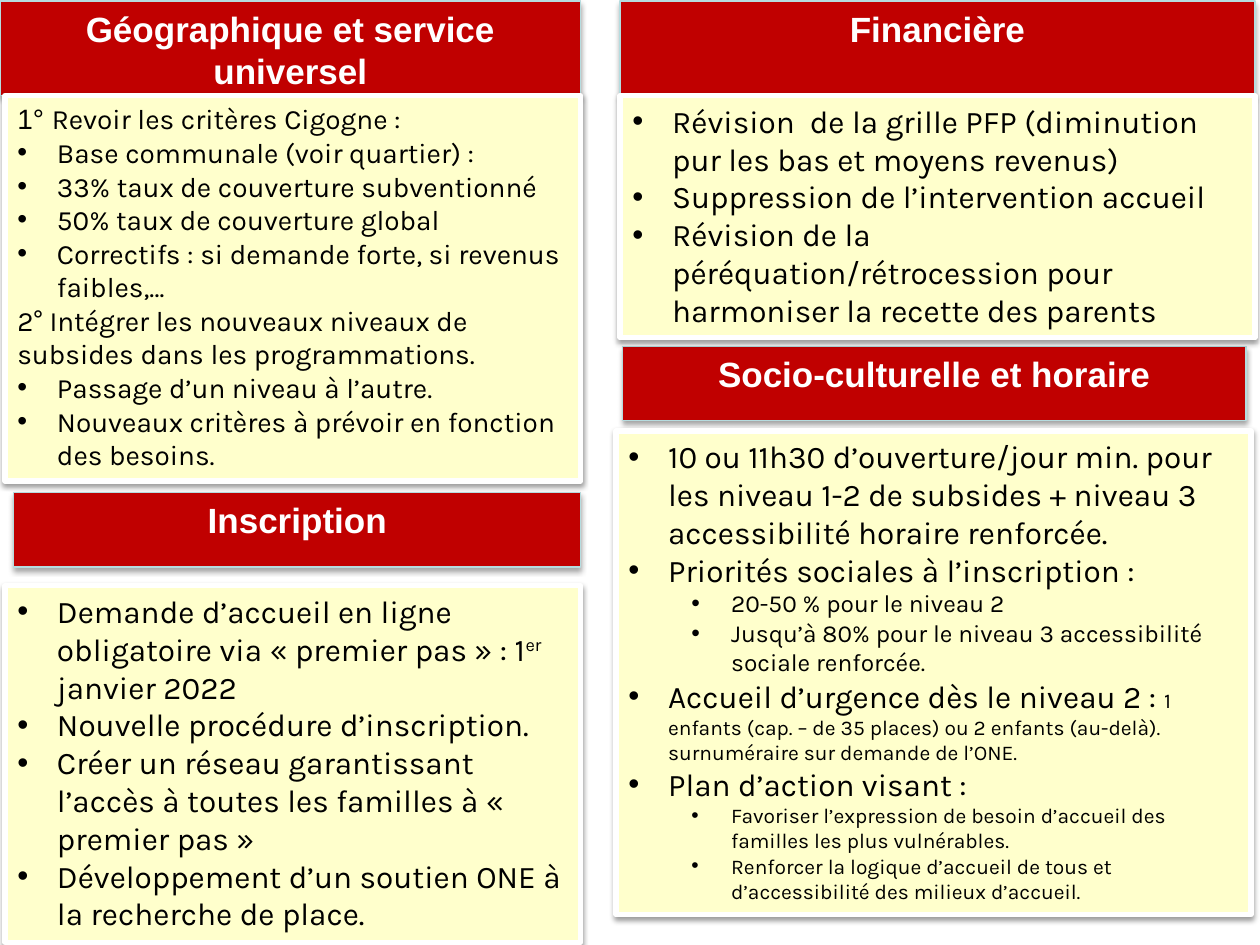
from lxml.etree import SubElement
from pptx import Presentation
from pptx.dml.color import RGBColor
from pptx.enum.shapes import MSO_SHAPE
from pptx.enum.text import MSO_ANCHOR, PP_ALIGN
from pptx.oxml.ns import qn
from pptx.util import Cm, Pt

COLORS = {
    "header": "C00000",
    "header_line": "B6DCDF",
    "panel": "FFFFCC",
    "white": "FFFFFF",
    "black": "000000",
}
PLAIN, BULLET, SUB_BULLET = None, 0.8, 2.07

headers = [
    ("Géographique et service universel", 0, 0.02, 11.71, 1.9),
    ("Financière", 12.5, 0.02, 12.8, 1.9),
    ("Inscription", 0.28, 9.93, 11.43, 1.5),
    ("Socio-culturelle et horaire", 12.55, 6.98, 12.57, 1.5),
]

panels = [
    (0.1, 1.93, 11.61, 7.77, [
        (PLAIN, [("1° ", 16, "Arial"), ("Revoir les critères Cigogne :", 16, "Karla")]),
        (BULLET, [("Base communale (voir quartier) :", 16, "Karla")]),
        (BULLET, [("33% taux de couverture subventionné", 16, "Karla")]),
        (BULLET, [("50% taux de couverture global", 16, "Karla")]),
        (BULLET, [("Correctifs : si demande forte, si revenus faibles,…", 16, "Karla")]),
        (PLAIN, [("2° Intégrer les nouveaux niveaux de subsides dans les programmations.", 16, "Karla")]),
        (BULLET, [("Passage d’un niveau à l’autre.", 16, "Karla")]),
        (BULLET, [("Nouveaux critères à prévoir en fonction des besoins.", 16, "Karla")]),
    ]),
    (12.5, 1.93, 12.8, 4.88, [
        (BULLET, [("Révision  de la grille PFP (diminution pur les bas et moyens revenus)", 18, "Karla")]),
        (BULLET, [("Suppression de l’intervention accueil", 18, "Karla")]),
        (BULLET, [("Révision de la péréquation/rétrocession pour harmoniser la recette des parents", 18, "Karla")]),
    ]),
    (0.1, 11.81, 11.61, 7.19, [
        (BULLET, [
            ("Demande d’accueil en ligne obligatoire via « premier pas » : 1", 18, "Karla"),
            ("er", 18, "Karla"),
            (" janvier 2022", 18, "Karla"),
        ]),
        (BULLET, [("Nouvelle procédure d’inscription.", 18, "Karla")]),
        (BULLET, [("Créer un réseau garantissant l’accès à toutes les familles à « premier pas »", 18, "Karla")]),
        (BULLET, [("Développement d’un soutien ONE à la recherche de place.", 18, "Karla")]),
    ]),
    (12.42, 8.69, 12.8, 9.75, [
        (BULLET, [("10 ou 11h30 d’ouverture/jour min. pour les niveau 1-2 de subsides + niveau 3 accessibilité horaire renforcée.", 18, "Karla")]),
        (BULLET, [("Priorités sociales à l’inscription :", 18, "Karla")]),
        (SUB_BULLET, [("20-50 % pour le niveau 2", 14, "Karla")]),
        (SUB_BULLET, [("Jusqu’à 80% pour le niveau 3 accessibilité sociale renforcée.", 14, "Karla")]),
        (BULLET, [
            ("Accueil d’urgence dès le niveau 2 : ", 18, "Karla"),
            ("1 enfants (cap. – de 35 places) ou 2 enfants (au-delà). surnuméraire sur demande de l’ONE.", 12, "Karla"),
        ]),
        (BULLET, [("Plan d’action visant :", 18, "Karla")]),
        (SUB_BULLET, [("Favoriser l’expression de besoin d’accueil des familles les plus vulnérables.", 12, "Karla")]),
        (SUB_BULLET, [("Renforcer la logique d’accueil de tous et d’accessibilité des milieux d’accueil.", 12, "Karla")]),
    ]),
]


def add_box(left, top, width, height, fill, line, line_width, shadow_alpha, shadow_distance):
    shape = slide.shapes.add_shape(MSO_SHAPE.RECTANGLE, Cm(left), Cm(top), Cm(width), Cm(height))
    shape.fill.solid()
    shape.fill.fore_color.rgb = RGBColor.from_string(COLORS[fill])
    shape.line.color.rgb = RGBColor.from_string(COLORS[line])
    shape.line.width = Pt(line_width)
    shape.shadow.inherit = False
    effects = shape._element.spPr.find(qn("a:effectLst"))
    shadow = SubElement(effects, qn("a:outerShdw"), blurRad=str(Pt(3.1)),
                        dist=str(Pt(shadow_distance)), dir="5400000", rotWithShape="0")
    color = SubElement(shadow, qn("a:srgbClr"), val=COLORS["black"])
    SubElement(color, qn("a:alpha"), val=str(shadow_alpha * 1000))
    shape.text_frame.word_wrap = True
    shape.text_frame.vertical_anchor = MSO_ANCHOR.TOP
    return shape.text_frame


def add_run(paragraph, text, size, font_name, color, bold=False):
    run = paragraph.add_run()
    run.text = text
    run.font.size = Pt(size)
    run.font.name = font_name
    run.font.bold = bold
    run.font.color.rgb = RGBColor.from_string(COLORS[color])
    return run


presentation = Presentation()
presentation.slide_width = Cm(25.4)
presentation.slide_height = Cm(19.05)
slide = presentation.slides.add_slide(presentation.slide_layouts[6])

for title, left, top, width, height in headers:
    text_frame = add_box(left, top, width, height, "header", "header_line", 0.75, 35, 1.8)
    paragraph = text_frame.paragraphs[0]
    paragraph.alignment = PP_ALIGN.CENTER
    add_run(paragraph, title, 20, "Arial", "white", bold=True)

for left, top, width, height, items in panels:
    text_frame = add_box(left, top, width, height, "panel", "white", 3, 38, 1.6)
    for index, (margin, runs) in enumerate(items):
        paragraph = text_frame.add_paragraph() if index else text_frame.paragraphs[0]
        paragraph.alignment = PP_ALIGN.LEFT
        if margin is not PLAIN:
            paragraph.level = 1 if margin == SUB_BULLET else 0
            properties = paragraph._p.get_or_add_pPr()
            properties.set("marL", str(Cm(margin)))
            properties.set("indent", str(-Cm(BULLET)))
            SubElement(properties, qn("a:buFont"), typeface="Arial")
            SubElement(properties, qn("a:buChar"), char="•")
        for text, size, font_name in runs:
            run = add_run(paragraph, text, size, font_name, "black")
            if text == "er":
                run.font._element.set("baseline", "30000")

presentation.save("out.pptx")
